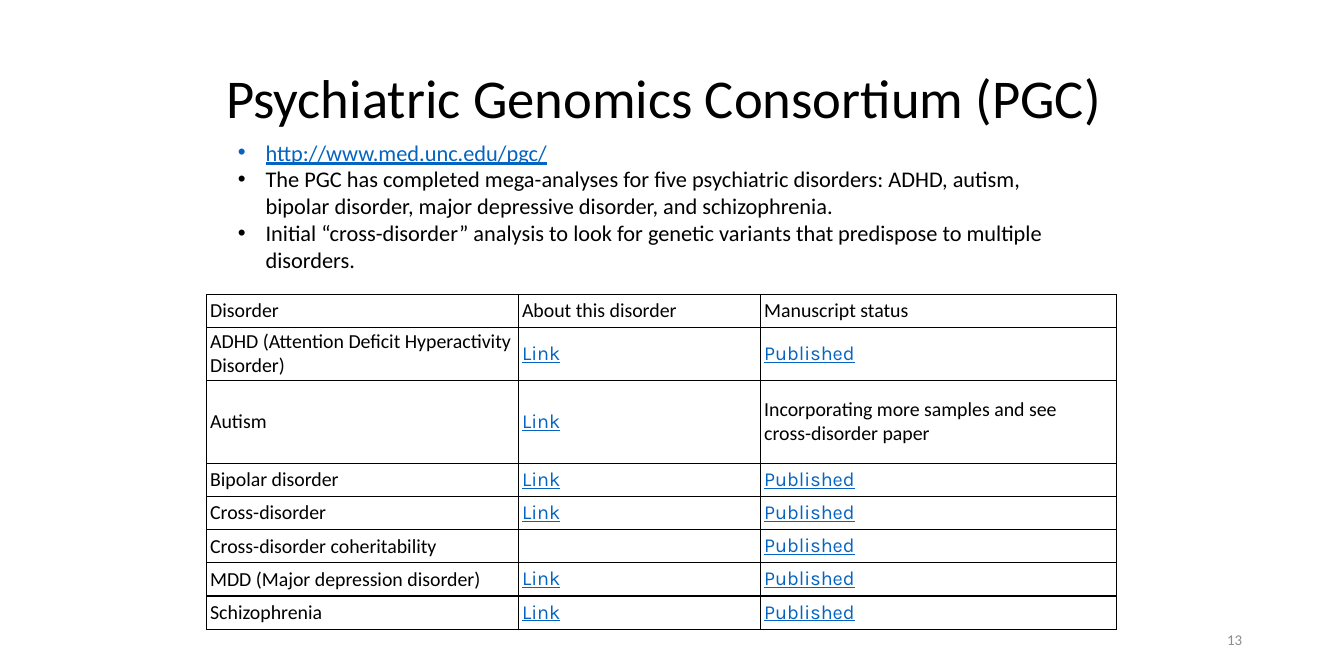
import lxml.etree
import pptx
import pptx.dml.color
import pptx.enum.text
import pptx.oxml.ns
import pptx.util
from pptx.util import Cm

BLACK = pptx.dml.color.RGBColor(0x00, 0x00, 0x00)
WHITE = pptx.dml.color.RGBColor(0xFF, 0xFF, 0xFF)
LINK_BLUE = pptx.dml.color.RGBColor(0x05, 0x63, 0xC1)
GREY = pptx.dml.color.RGBColor(0x8C, 0x8C, 0x8C)

MIDDLE = pptx.enum.text.MSO_ANCHOR.MIDDLE
LINK_WORDS = ("Link", "Published")

BULLETS = [
    "http://www.med.unc.edu/pgc/",
    "The PGC has completed mega-analyses for five psychiatric disorders: ADHD, autism, "
    "bipolar disorder, major depressive disorder, and schizophrenia.",
    "Initial “cross-disorder” analysis to look for genetic variants that predispose "
    "to multiple disorders.",
]

COLUMN_WIDTHS = [8.86, 6.88, 10.11]
ROW_HEIGHT = 0.94
TALL_ROWS = {1: 1.5, 2: 2.36}
DISORDERS = [
    ("Disorder", "About this disorder", "Manuscript status"),
    ("ADHD (Attention Deficit Hyperactivity Disorder)", "Link", "Published"),
    ("Autism", "Link", "Incorporating more samples and see\vcross-disorder paper"),
    ("Bipolar disorder", "Link", "Published"),
    ("Cross-disorder", "Link", "Published"),
    ("Cross-disorder coheritability", "", "Published"),
    ("MDD (Major depression disorder)", "Link", "Published"),
    ("Schizophrenia", "Link", "Published"),
]


def place(shape, left, top, width, height):
    shape.left, shape.top = Cm(left), Cm(top)
    shape.width, shape.height = Cm(width), Cm(height)


def format_runs(p, size, color=BLACK, font="Calibri", underline=False):
    for r in p.runs:
        r.font.size = pptx.util.Pt(size)
        r.font.name = font
        r.font.color.rgb = color
        r.font.underline = underline


def fill_title(sp, text):
    place(sp, 2.62, 1.02, 32.92, 3.68)
    tf = sp.text_frame
    tf.text = text
    tf.auto_size = pptx.enum.text.MSO_AUTO_SIZE.NONE
    tf.vertical_anchor = MIDDLE
    tf.margin_right = Cm(0.68)
    p = tf.paragraphs[0]
    p.alignment = pptx.enum.text.PP_ALIGN.CENTER
    p.line_spacing = 0.9
    format_runs(p, 44)


def fill_bullets(sp, lines):
    place(sp, 6.5, 3.81, 24.26, 4.11)
    tf = sp.text_frame
    tf.text = "\n".join(lines)
    tf.auto_size = pptx.enum.text.MSO_AUTO_SIZE.NONE
    for p in tf.paragraphs:
        p.space_before = pptx.util.Pt(0)
        pPr = p._p.get_or_add_pPr()
        pPr.set("marL", str(Cm(0.79)))
        pPr.set("indent", str(-Cm(0.79)))
        is_link = p.text.startswith("http")
        format_runs(p, 18, LINK_BLUE if is_link else BLACK, underline=is_link)


def add_borders(cell):
    tcPr = cell._tc.get_or_add_tcPr()
    qn = pptx.oxml.ns.qn
    for side in ("lnL", "lnR", "lnT", "lnB"):
        ln = lxml.etree.SubElement(tcPr, qn("a:" + side), w=str(pptx.util.Pt(1)))
        fill = lxml.etree.SubElement(ln, qn("a:solidFill"))
        lxml.etree.SubElement(fill, qn("a:srgbClr"), val=str(BLACK))


def fill_cell(cell, text):
    add_borders(cell)
    cell.fill.solid()
    cell.fill.fore_color.rgb = WHITE
    cell.vertical_anchor = MIDDLE
    cell.margin_left = cell.margin_right = Cm(0.1)
    cell.margin_top = cell.margin_bottom = Cm(0.05)
    cell.text_frame.text = text
    p = cell.text_frame.paragraphs[0]
    if text in LINK_WORDS:
        format_runs(p, 16, LINK_BLUE, "Karla", True)
    else:
        format_runs(p, 16)


def add_disorder_table(s, rows):
    heights = [TALL_ROWS.get(i, ROW_HEIGHT) for i in range(len(rows))]
    frame = s.shapes.add_table(len(rows), len(COLUMN_WIDTHS), Cm(5.87), Cm(8.36),
                               Cm(sum(COLUMN_WIDTHS)), Cm(sum(heights)))
    table = frame.table
    table.first_row = table.horz_banding = False
    for column, width in zip(table.columns, COLUMN_WIDTHS):
        column.width = Cm(width)
    for row, height, texts in zip(table.rows, heights, rows):
        row.height = Cm(height)
        for cell, text in zip(row.cells, texts):
            fill_cell(cell, text)


def add_page_number(s, number):
    sp = s.shapes.add_textbox(Cm(26.95), Cm(17.65), Cm(8.59), Cm(1.02))
    tf = sp.text_frame
    tf.word_wrap = True
    tf.vertical_anchor = MIDDLE
    tf.text = number
    p = tf.paragraphs[0]
    p.alignment = pptx.enum.text.PP_ALIGN.RIGHT
    format_runs(p, 12, GREY)


def main():
    prs = pptx.Presentation()
    prs.slide_width, prs.slide_height = Cm(38.18), Cm(19.05)
    s = prs.slides.add_slide(prs.slide_layouts[1])
    fill_title(s.shapes.title, "Psychiatric Genomics Consortium (PGC)")
    fill_bullets(s.placeholders[1], BULLETS)
    add_disorder_table(s, DISORDERS)
    add_page_number(s, "13")
    prs.save("out.pptx")


if __name__ == "__main__":
    main()
